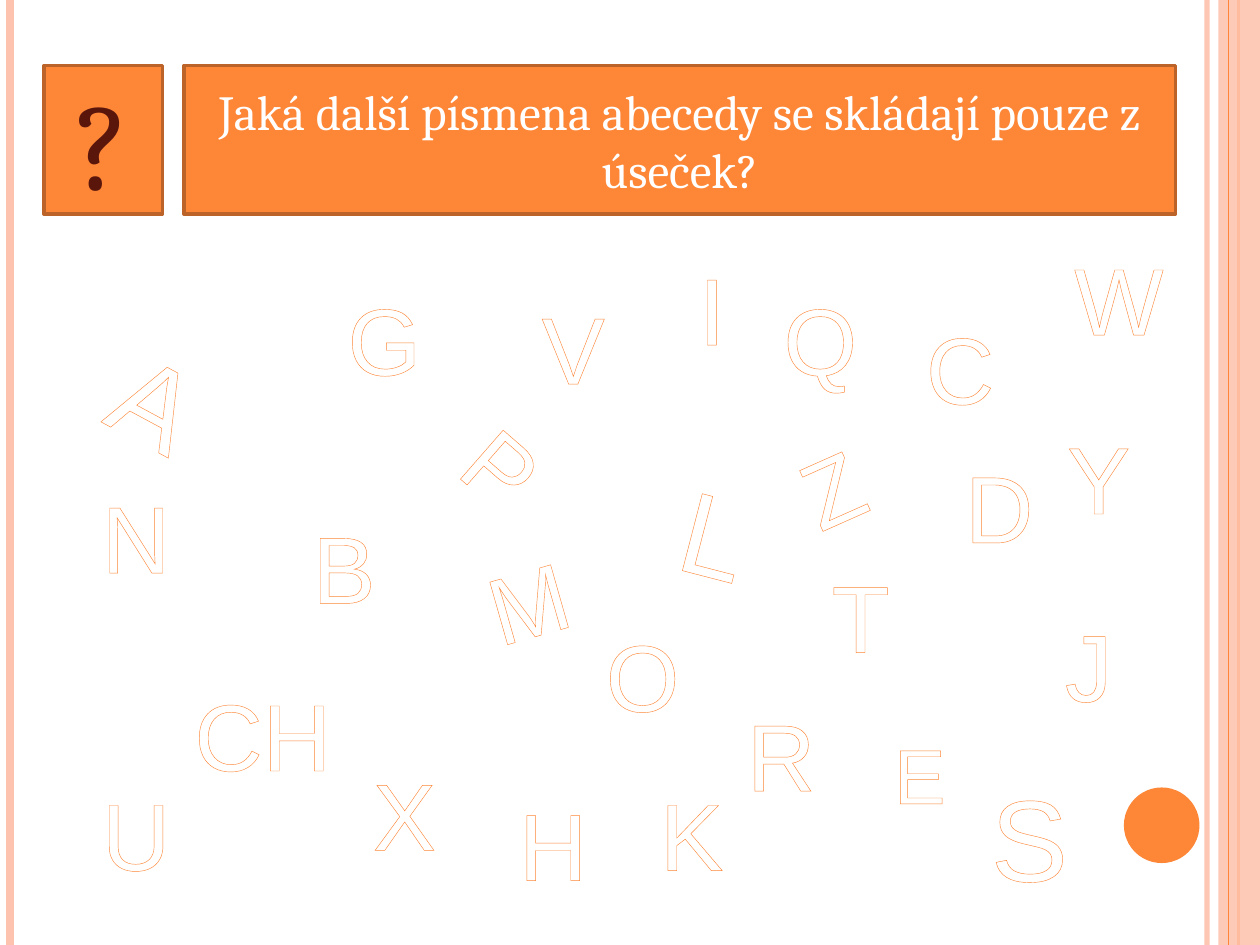
from dataclasses import dataclass

from lxml import etree
from pptx import Presentation
from pptx import util as u
from pptx.dml.color import RGBColor
from pptx.enum import shapes, text
from pptx.oxml import ns

COLS, ROWS = 100, 75


@dataclass(frozen=True)
class Theme:
    accent: str = "FE8637"
    pale: str = "FEC3AE"
    edge: str = "BC6329"
    dark: str = "5A160B"
    white: str = "FFFFFF"
    heading_font: str = "Cambria"
    letter_font: str = "Arial"
    title_size: int = 28
    mark_size: int = 72
    letter_size: int = 54
    outline: float = 0.8


@dataclass(frozen=True)
class Box:
    col: float
    row: float
    cols: float
    rows: float


@dataclass(frozen=True)
class Stripe:
    col: float
    color: str
    weight: float
    opacity: int = 100


@dataclass(frozen=True)
class Letter:
    name: str
    col: float
    row: float
    size: int = 54
    angle: float = 0
    cols: float = 9.8


T = Theme()

STRIPES = [
    Stripe(95.8, T.pale, 3, 93),
    Stripe(0.8, T.pale, 4.5),
    Stripe(98.3, T.accent, 1.5),
]
THIN_STRIPE = Stripe(97.5, T.accent, 0.75)
SIDE_BAND = Box(96.7, 0, 3.3, ROWS)
DOT = Box(89.2, 62.5, 6, 6)
TITLE = Box(14.6, 5.2, 78.7, 11.8)
MARK = Box(3.5, 5.2, 9.4, 11.8)

LETTERS = [
    Letter("O", 46.1, 48.5),
    Letter("N", 5.9, 37.5),
    Letter("M", 37, 42.6, angle=344.1),
    Letter("L", 51.9, 36.2, size=66, angle=14.5),
    Letter("K", 50, 61.1),
    Letter("C", 71.3, 24.1),
    Letter("J", 81.5, 47.7),
    Letter("I", 51.6, 19.4),
    Letter("CH", 12.2, 53.2, cols=17.3),
    Letter("E", 68.1, 57.2, size=44),
    Letter("A", 7.5, 25.7, size=66, angle=28.4),
    Letter("G", 25.6, 21.8),
    Letter("D", 74.4, 35.1),
    Letter("B", 22.4, 39.9),
    Letter("H", 39, 61.9),
    Letter("W", 83.9, 18.6),
    Letter("V", 40.6, 22.5),
    Letter("U", 5.9, 61.1),
    Letter("T", 63.4, 43.8),
    Letter("S", 76.8, 60.3, size=66),
    Letter("R", 57.1, 54.8),
    Letter("Q", 60.2, 21.8),
    Letter("P", 35, 32, angle=41.1),
    Letter("Z", 61.1, 33.6, angle=336),
    Letter("Y", 82.3, 32.8),
    Letter("X", 27.2, 59.5),
]

prs = Presentation()
prs.slide_width, prs.slide_height = u.Inches(10), u.Inches(7.5)
CELL = prs.slide_width / COLS


def frame(box: Box) -> tuple[int, ...]:
    return tuple(round(n * CELL) for n in (box.col, box.row, box.cols, box.rows))


def set_opacity(fill_parent, percent: int) -> None:
    color = fill_parent.find(".//" + ns.qn("a:srgbClr"))
    etree.SubElement(color, ns.qn("a:alpha"), val=str(percent * 1000))


def add_stripe(s, stripe: Stripe) -> None:
    x = round(stripe.col * CELL)
    line = s.shapes.add_connector(shapes.MSO_CONNECTOR.STRAIGHT, x, 0, x, prs.slide_height)
    line.line.color.rgb = RGBColor.from_string(stripe.color)
    line.line.width = u.Pt(stripe.weight)
    sp_pr = line._element.spPr
    if stripe.opacity < 100:
        set_opacity(sp_pr, stripe.opacity)
    etree.SubElement(sp_pr, ns.qn("a:effectLst"))


def add_plain(s, kind: shapes.MSO_SHAPE, box: Box, color: str):
    sp = s.shapes.add_shape(kind, *frame(box))
    sp.shadow.inherit = False
    sp.fill.solid()
    sp.fill.fore_color.rgb = RGBColor.from_string(color)
    sp.line.fill.background()
    return sp


def write(sp, words: str, font: str, size: int, color: str):
    tf = sp.text_frame
    tf.word_wrap = True
    p = tf.paragraphs[0]
    p.alignment = text.PP_ALIGN.CENTER
    p.font.name = font
    p.font.size = u.Pt(size)
    p.font.color.rgb = RGBColor.from_string(color)
    r = p.add_run()
    r.text = words
    return r


def format_banner(sp, words: str, size: int, color: str) -> None:
    sp.fill.solid()
    sp.fill.fore_color.rgb = RGBColor.from_string(T.accent)
    sp.line.color.rgb = RGBColor.from_string(T.edge)
    sp.line.width = u.Pt(2)
    write(sp, words, T.heading_font, size, color)
    sp.text_frame.auto_size = text.MSO_AUTO_SIZE.NONE
    sp.text_frame.vertical_anchor = text.MSO_ANCHOR.MIDDLE


def add_letter(s, letter: Letter) -> None:
    rows = letter.size / 6 + 1.1
    sp = s.shapes.add_textbox(*frame(Box(letter.col, letter.row, letter.cols, rows)))
    sp.rotation = letter.angle
    r = write(sp, letter.name, T.letter_font, letter.size, T.white)
    sp.text_frame.auto_size = text.MSO_AUTO_SIZE.SHAPE_TO_FIT_TEXT
    ln = etree.Element(ns.qn("a:ln"), w=str(u.Pt(T.outline)))
    fill = etree.SubElement(ln, ns.qn("a:solidFill"))
    etree.SubElement(fill, ns.qn("a:srgbClr"), val=T.accent)
    r._r.get_or_add_rPr().insert(0, ln)


def main() -> None:
    s = prs.slides.add_slide(prs.slide_layouts[5])
    for stripe in STRIPES:
        add_stripe(s, stripe)
    band = add_plain(s, shapes.MSO_SHAPE.RECTANGLE, SIDE_BAND, T.pale)
    set_opacity(band._element.spPr, 87)
    add_stripe(s, THIN_STRIPE)
    add_plain(s, shapes.MSO_SHAPE.OVAL, DOT, T.accent)

    title = s.shapes.title
    title.left, title.top, title.width, title.height = frame(TITLE)
    question = "Jaká další písmena abecedy se skládají pouze z úseček?"
    format_banner(title, question, T.title_size, T.white)
    mark = add_plain(s, shapes.MSO_SHAPE.RECTANGLE, MARK, T.accent)
    format_banner(mark, "?", T.mark_size, T.dark)

    for letter in LETTERS:
        add_letter(s, letter)
    prs.save("out.pptx")


if __name__ == "__main__":
    main()
